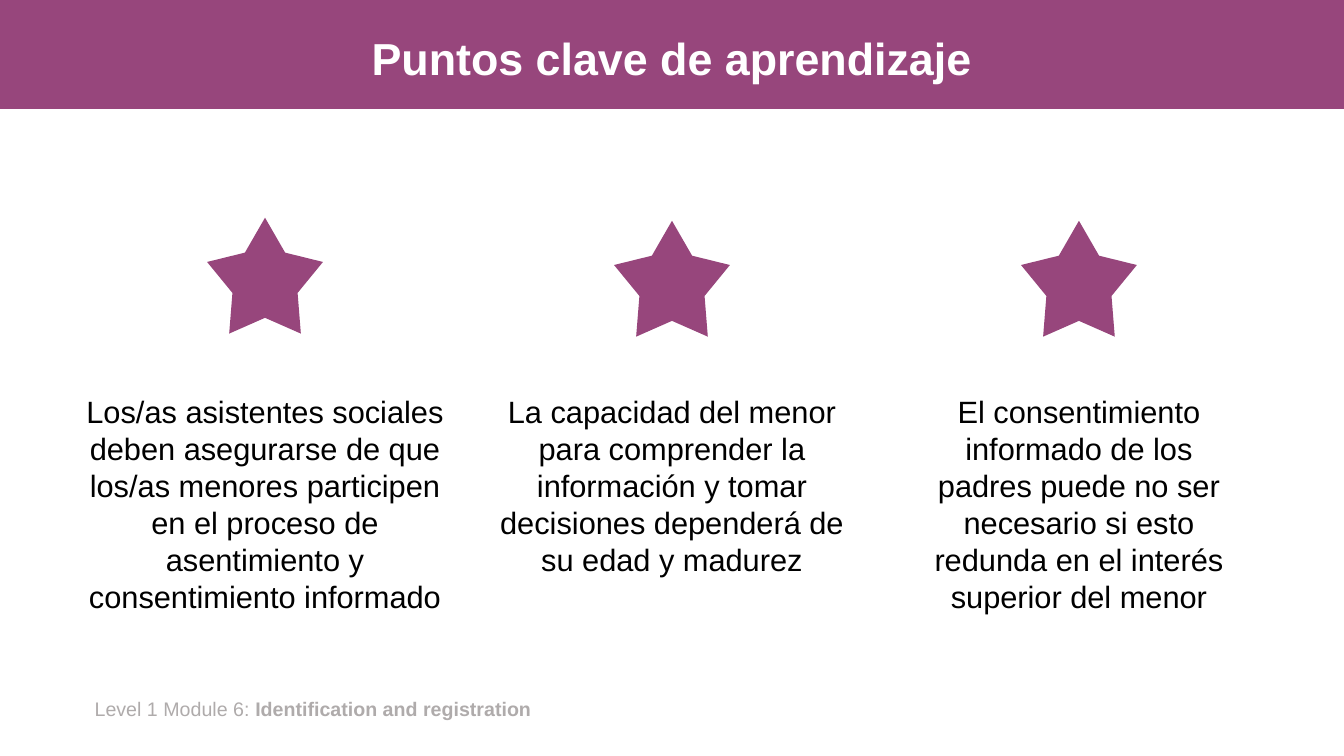
from pptx import Presentation
from pptx.dml.color import RGBColor
from pptx.enum.shapes import MSO_SHAPE as Preset
from pptx.enum.text import MSO_ANCHOR as Anchor, MSO_AUTO_SIZE as AutoSize, PP_ALIGN as Align
from pptx.util import Pt

PLUM, WHITE, BLACK, GREY = "97467C", "FFFFFF", "000000", "AFABAB"
SLIDE_WIDTH, SLIDE_HEIGHT = 960, 540
COLUMN_STEP = 290.7
STAR_SIZE = 82.8
POINTS_TOP = 277.2

# text, width of its box, height of its box, top of its star
LEARNING_POINTS = [
    ("Los/as asistentes sociales deben asegurarse de que los/as menores participen "
     "en el proceso de asentimiento y consentimiento informado", 273.6, 167, 155.5),
    ("La capacidad del menor para comprender la información y tomar decisiones "
     "dependerá de su edad y madurez", 260, 140.4, 157.7),
    ("El consentimiento informado de los padres puede no ser necesario si esto "
     "redunda en el interés superior del menor", 247, 167, 157.7),
]


def color(hex_code):
    return RGBColor.from_string(hex_code)


def apply(target, values):
    """Set every attribute named in values on target."""
    for attribute, value in values.items():
        setattr(target, attribute, value)


class SlideBuilder:
    font = "Arial"

    def __init__(self, slide):
        self.slide = slide

    def place(self, shape, left, top, width, height):
        apply(shape, dict(left=Pt(left), top=Pt(top), width=Pt(width), height=Pt(height)))

    def add_runs(self, frame, runs, size, hex_code, align):
        """Fill the frame with one paragraph of (text, bold) runs."""
        paragraph = frame.paragraphs[0]
        paragraph.alignment = align
        for text, bold in runs:
            run = paragraph.add_run()
            run.text = text
            apply(run.font, dict(name=self.font, size=Pt(size), bold=bold))
            run.font.color.rgb = color(hex_code)
        return paragraph

    def title(self, text, box):
        heading = self.slide.shapes.title
        self.place(heading, *box)
        apply(heading.text_frame, dict(vertical_anchor=Anchor.MIDDLE, word_wrap=True,
                                       auto_size=AutoSize.NONE))
        paragraph = self.add_runs(heading.text_frame, [(text, True)], 32, WHITE, Align.CENTER)
        paragraph.line_spacing = 0.9

    def text(self, runs, box, size, hex_code, align):
        frame = self.slide.shapes.add_textbox(*map(Pt, box)).text_frame
        apply(frame, dict(word_wrap=True, auto_size=AutoSize.SHAPE_TO_FIT_TEXT))
        self.add_runs(frame, runs, size, hex_code, align)

    def shape(self, preset, box, hex_code):
        figure = self.slide.shapes.add_shape(preset, *map(Pt, box))
        figure.shadow.inherit = False
        figure.fill.solid()
        figure.fill.fore_color.rgb = color(hex_code)
        figure.line.fill.background()
        return figure

    def band(self, box):
        """Draw the header band behind the title."""
        header = self.shape(Preset.RECTANGLE, box, PLUM)
        self.slide.shapes.title.element.addprevious(header.element)

    def star(self, box):
        self.shape(Preset.STAR_5_POINT, box, PLUM).adjustments[0] = 0.281


def main():
    presentation = Presentation()
    apply(presentation, dict(slide_width=Pt(SLIDE_WIDTH), slide_height=Pt(SLIDE_HEIGHT)))
    title_only = presentation.slide_layouts[5]
    builder = SlideBuilder(presentation.slides.add_slide(title_only))

    builder.band((0, 0, SLIDE_WIDTH, 77.8))
    builder.title("Puntos clave de aprendizaje", (66, 9.4, 828, 68.4))
    builder.text([("Level 1 Module 6: ", False), ("Identification and registration", True)],
                 (60.5, 494.6, 327.6, 24.5), 14, GREY, Align.LEFT)

    for column, (point, width, height, star_top) in enumerate(LEARNING_POINTS):
        center = SLIDE_WIDTH / 2 + (column - 1) * COLUMN_STEP
        builder.star((center - STAR_SIZE / 2, star_top, STAR_SIZE, STAR_SIZE))
        builder.text([(point, False)], (center - width / 2, POINTS_TOP, width, height),
                     22, BLACK, Align.CENTER)

    presentation.save("out.pptx")


if __name__ == "__main__":
    main()
